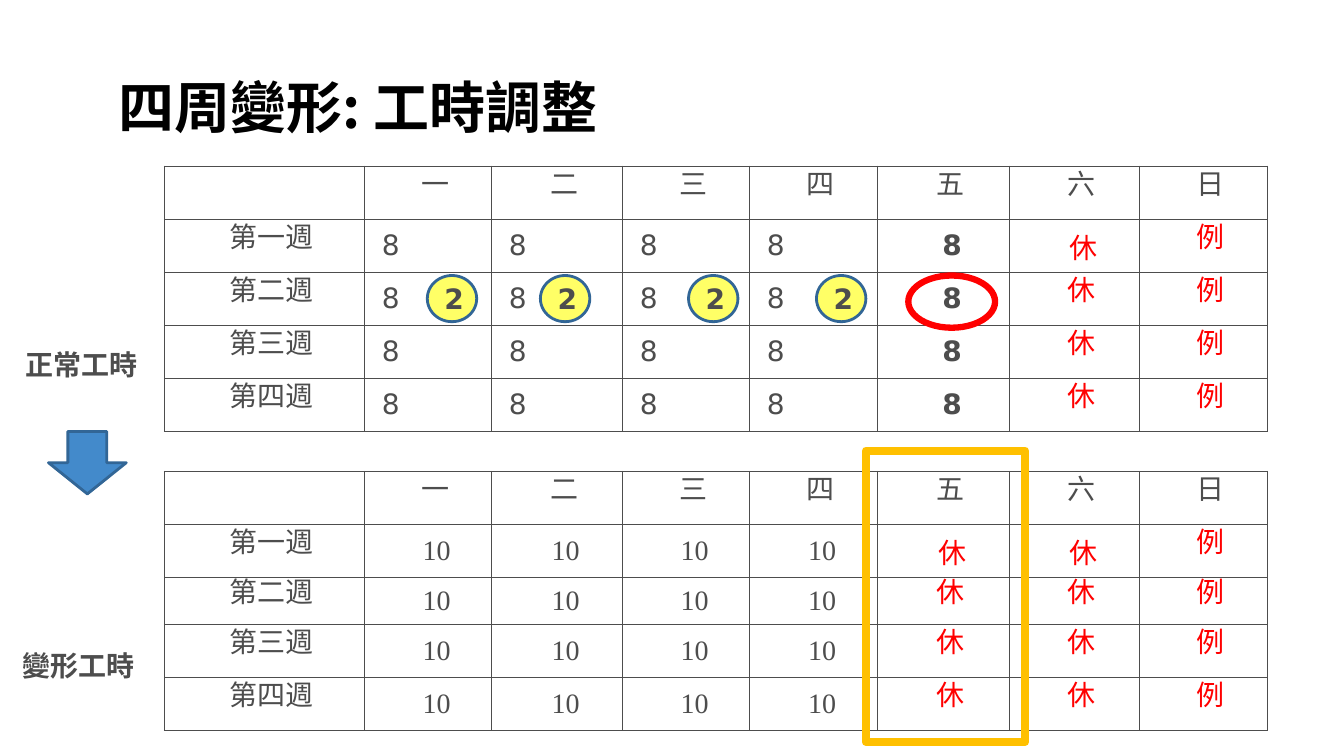
from lxml.etree import SubElement
from pptx import Presentation
from pptx.dml.color import RGBColor
from pptx.enum.shapes import MSO_SHAPE
from pptx.enum.text import MSO_ANCHOR, MSO_AUTO_SIZE, PP_ALIGN
from pptx.oxml.ns import qn
from pptx.util import Pt

BLACK = RGBColor(0x00, 0x00, 0x00)
WHITE = RGBColor(0xFF, 0xFF, 0xFF)
GRAY = RGBColor(0x4D, 0x4D, 0x4D)
RED = RGBColor(0xFF, 0x00, 0x00)
YELLOW = RGBColor(0xFF, 0xFF, 0x66)
GOLD = RGBColor(0xFF, 0xC0, 0x00)
BLUE = RGBColor(0x43, 0x8A, 0xCB)
NAVY = RGBColor(0x32, 0x66, 0x96)

SANS, SERIF, HAN = "DejaVu Sans", "Times New Roman", "Noto Sans CJK SC"
DAYS = ["", "一", "二", "三", "四", "五", "六", "日"]
WEEKS = ["第一週", "第二週", "第三週", "第四週"]
COLS = [142.9, 90.7, 93.6, 90.7, 91.4, 94.3, 92.9, 91.5]
TALL, SHORT = 37.86, 33.6


def write(frame, text, size=20, font=SANS, color=GRAY, bold=False,
          align=PP_ALIGN.LEFT, left=0, hang=0, line=None):
    """Put one formatted paragraph into a text frame."""
    para = frame.paragraphs[0]
    para.alignment = align
    props = para._p.get_or_add_pPr()
    props.set("marL", str(Pt(left)))
    props.set("indent", str(Pt(-hang)))
    if line:
        para.line_spacing = Pt(line)
    run = para.add_run()
    run.text = text
    style = run.font
    style.name, style.size, style.bold = font, Pt(size), bold
    style.color.rgb = color
    SubElement(run._r.get_or_add_rPr(), qn("a:ea"), typeface=HAN)


class Board:
    """Current slide and its shared style."""

    def __init__(self, deck):
        self.slide = deck.slides.add_slide(deck.slide_layouts[5])
        self.shapes = self.slide.shapes

    def title(self, text, x, y, w, h):
        box = self.shapes.title
        box.left, box.top, box.width, box.height = map(Pt, (x, y, w, h))
        frame = box.text_frame
        frame.auto_size = MSO_AUTO_SIZE.NONE
        frame.vertical_anchor = MSO_ANCHOR.MIDDLE
        frame.margin_left = frame.margin_top = frame.margin_bottom = Pt(4.3)
        write(frame, text, size=40, font=HAN, color=BLACK, bold=True,
              left=2.9, hang=2.9)

    def label(self, text, x, y, w, h):
        frame = self.shapes.add_textbox(*map(Pt, (x, y, w, h))).text_frame
        frame.word_wrap = False
        frame.auto_size = MSO_AUTO_SIZE.SHAPE_TO_FIT_TEXT
        write(frame, text, bold=True)

    def shape(self, kind, x, y, w, h, edge, width, fill=None, text=""):
        item = self.shapes.add_shape(kind, *map(Pt, (x, y, w, h)))
        item.shadow.inherit = False
        item.line.color.rgb = edge
        item.line.width = Pt(width)
        if fill is None:
            item.fill.background()
        else:
            item.fill.solid()
            item.fill.fore_color.rgb = fill
        if text:
            item.text_frame.vertical_anchor = MSO_ANCHOR.MIDDLE
            write(item.text_frame, text, bold=True, align=PP_ALIGN.CENTER)

    def border(self, cell):
        props = cell._tc.get_or_add_tcPr()
        for side in ("lnL", "lnR", "lnT", "lnB"):
            edge = SubElement(props, qn(f"a:{side}"), w=str(Pt(1)))
            paint = SubElement(edge, qn("a:solidFill"))
            SubElement(paint, qn("a:srgbClr"), val=str(GRAY))

    def cell(self, cell, text, row, col):
        cell.margin_left = cell.margin_right = 0
        cell.margin_top = cell.margin_bottom = 0
        cell.vertical_anchor = MSO_ANCHOR.MIDDLE
        self.border(cell)
        marked = text == "8" and col == 5
        if marked:
            cell.fill.solid()
            cell.fill.fore_color.rgb = WHITE
        else:
            cell.fill.background()
        if not text:
            return
        # Hours and the first week's days off keep normal line spacing
        loose = text.isdigit() or (text == "休" and row == 1)
        plain = text == "8" and not marked
        write(cell.text_frame, text, bold=marked,
              font=SERIF if text == "10" else SANS,
              color=RED if text in ("休", "例") else GRAY,
              align=PP_ALIGN.LEFT if plain else PP_ALIGN.CENTER,
              left=12.5 if loose else 10.4, line=None if loose else 13.7)

    def table(self, x, y, rows, hours):
        grid = [DAYS] + [[week] + hours for week in WEEKS]
        table = self.shapes.add_table(len(rows), len(COLS), Pt(x), Pt(y),
                                      Pt(sum(COLS)), Pt(sum(rows))).table
        table.first_row = table.horz_banding = False
        for col, width in zip(table.columns, COLS):
            col.width = Pt(width)
        for row, height in zip(table.rows, rows):
            row.height = Pt(height)
        for r, line in enumerate(grid):
            for c, text in enumerate(line):
                self.cell(table.cell(r, c), text, r, c)


def main():
    deck = Presentation()
    deck.slide_width, deck.slide_height = Pt(960), Pt(540)
    board = Board(deck)
    board.title("四周變形: 工時調整", 80.6, 46, 765.4, 59)

    # Normal and adjusted hours
    board.table(117.4, 118.8, [TALL] * 5, ["8"] * 5 + ["休", "例"])
    board.table(117.4, 336.8, [TALL, TALL, SHORT, TALL, TALL],
                ["10"] * 4 + ["休", "休", "例"])

    # Hours moved from Friday to the other days
    for x in (305.2, 386, 491.8, 583.2):
        board.shape(MSO_SHAPE.OVAL, x, 196.8, 35.3, 33, NAVY, 2, YELLOW, "2")
    board.shape(MSO_SHAPE.OVAL, 648.8, 196.8, 62, 37.3, RED, 4.5)

    # Side labels and arrow
    board.label("正常工時", 11.3, 244.8, 94.4, 31.5)
    board.shape(MSO_SHAPE.DOWN_ARROW, 34.6, 308.2, 55.6, 44.6, NAVY, 2, BLUE)
    board.label("變形工時", 8.8, 460, 94.4, 31.5)

    # Frame around the free Friday
    board.shape(MSO_SHAPE.RECTANGLE, 618.6, 322, 113.6, 208, GOLD, 6)
    deck.save("out.pptx")


if __name__ == "__main__":
    main()
